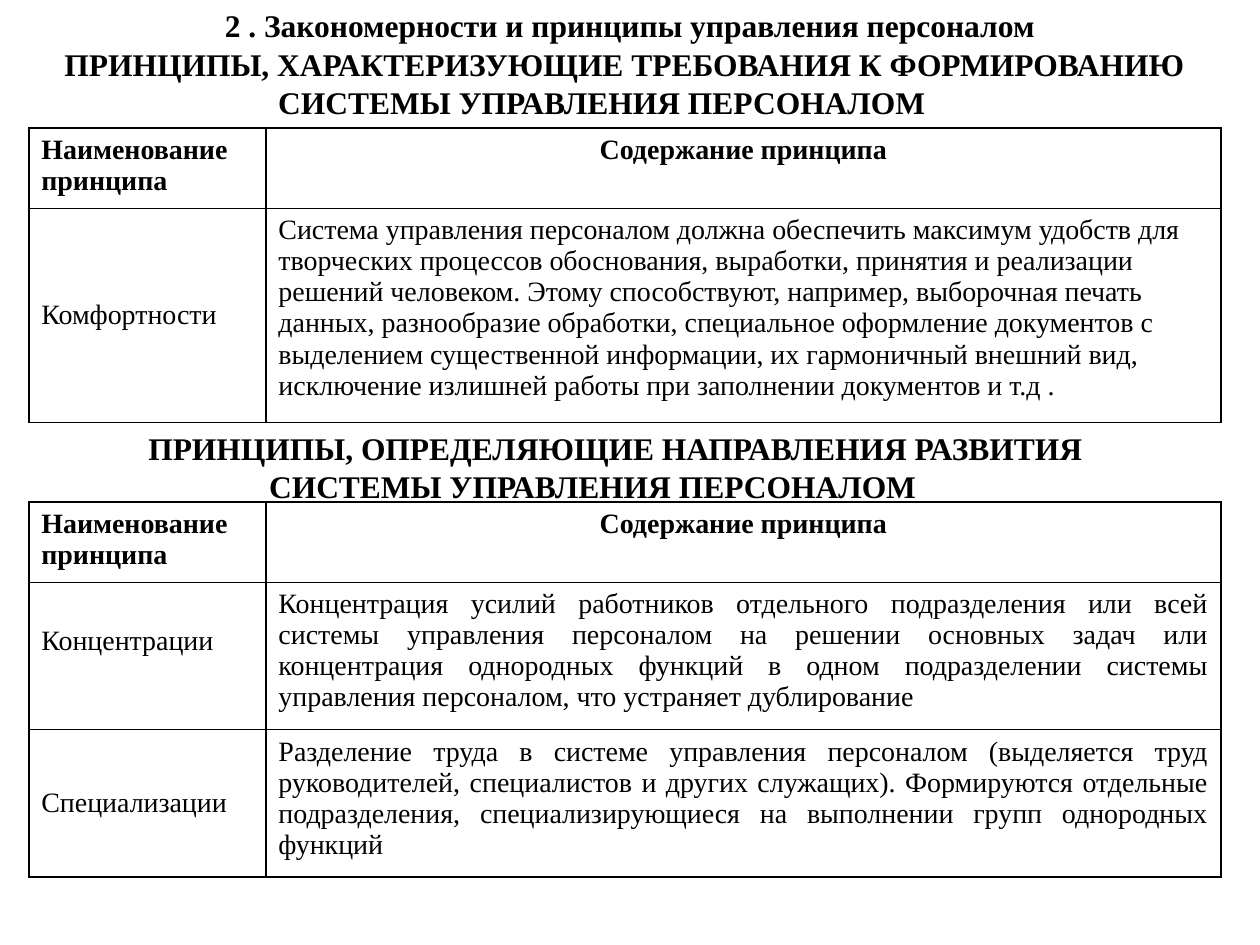
from lxml import etree
from pptx import Presentation
from pptx.dml.color import RGBColor as Rgb
from pptx.enum.text import MSO_ANCHOR as Anchor
from pptx.enum.text import MSO_AUTO_SIZE as Fit
from pptx.enum.text import PP_ALIGN as Align
from pptx.oxml.ns import qn
from pptx.util import Cm, Pt

HUES = {"ink": "000000", "paper": "FFFFFF"}
FONT = "Times New Roman"
LEFT, WIDE = 0.58, 24.03
COLS = (4.78, 19.25)
HEAD = ("Наименование принципа", "Содержание принципа")
HEAD_HIGH = 1.62

COMFORT = [
    ("Комфортности",
     "Система управления персоналом должна обеспечить максимум удобств для "
     "творческих процессов обоснования, выработки, принятия и реализации "
     "решений человеком. Этому способствуют, например, выборочная печать "
     "данных, разнообразие обработки, специальное оформление документов с "
     "выделением существенной информации, их гармоничный внешний вид, "
     "исключение излишней работы при заполнении документов и т.д ."),
]
GROWTH = [
    ("Концентрации",
     "Концентрация усилий работников отдельного подразделения или всей "
     "системы управления персоналом на решении основных задач или "
     "концентрация однородных функций в одном подразделении системы "
     "управления персоналом, что устраняет дублирование"),
    ("Специализации",
     "Разделение труда в системе управления персоналом (выделяется труд "
     "руководителей, специалистов и других служащих). Формируются отдельные "
     "подразделения, специализирующиеся на выполнении групп однородных "
     "функций"),
]


def write(frame, text, size=16, bold=False, align=Align.LEFT):
    """Fill a text frame, one paragraph per line of text."""
    frame.word_wrap = True
    for i, line in enumerate(text.split("\n")):
        para = frame.paragraphs[0] if i == 0 else frame.add_paragraph()
        para.alignment = align
        run = para.add_run()
        run.text = line
        font = run.font
        font.name, font.size, font.bold = FONT, Pt(size), bold
        font.color.rgb = Rgb.from_string(HUES["ink"])


def add_title(slide, text, left, top, width, height):
    box = slide.shapes.add_textbox(Cm(left), Cm(top), Cm(width), Cm(height))
    write(box.text_frame, text, size=18, bold=True, align=Align.CENTER)
    box.text_frame.auto_size = Fit.SHAPE_TO_FIT_TEXT


def style_cell(cell):
    """Set thin borders on all sides and a plain fill."""
    props = cell._tc.get_or_add_tcPr()
    for side in ("lnL", "lnR", "lnT", "lnB"):
        line = etree.SubElement(props, qn(f"a:{side}"), w=str(Pt(1)))
        fill = etree.SubElement(line, qn("a:solidFill"))
        etree.SubElement(fill, qn("a:srgbClr"), val=HUES["ink"])
    cell.fill.solid()
    cell.fill.fore_color.rgb = Rgb.from_string(HUES["paper"])


def add_grid(slide, top, rows, high, align):
    """Add a table of principles: a header and rows of equal height."""
    total = HEAD_HIGH + high * len(rows)
    grid = slide.shapes.add_table(len(rows) + 1, len(COLS), Cm(LEFT), Cm(top),
                                  Cm(WIDE), Cm(total)).table
    grid.first_row = grid.horz_banding = False
    for col, width in zip(grid.columns, COLS):
        col.width = Cm(width)
    for r, texts in enumerate([HEAD, *rows]):
        grid.rows[r].height = Cm(high if r else HEAD_HIGH)
        for c, text in enumerate(texts):
            cell = grid.cell(r, c)
            side = (align if r else Align.CENTER) if c else Align.LEFT
            write(cell.text_frame, text, bold=r == 0, align=side)
            if r and c == 0:
                cell.vertical_anchor = Anchor.MIDDLE
            style_cell(cell)
    return grid


def main():
    deck = Presentation()
    deck.slide_width, deck.slide_height = Cm(25.4), Cm(19.05)
    slide = deck.slides.add_slide(deck.slide_layouts[6])

    # Topic
    add_title(slide, "2 . Закономерности и принципы управления персоналом",
              0, 0, 25.4, 1.02)

    # Principles of forming the system
    add_grid(slide, 2.58, COMFORT, 4.32, Align.LEFT)
    add_title(slide, "ПРИНЦИПЫ, ХАРАКТЕРИЗУЮЩИЕ ТРЕБОВАНИЯ К ФОРМИРОВАНИЮ "
              "СИСТЕМЫ УПРАВЛЕНИЯ ПЕРСОНАЛОМ \t", LEFT, 0.79, WIDE, 1.8)

    # Principles of developing the system
    add_title(slide, "ПРИНЦИПЫ, ОПРЕДЕЛЯЮЩИЕ НАПРАВЛЕНИЯ РАЗВИТИЯ\n"
              "СИСТЕМЫ УПРАВЛЕНИЯ ПЕРСОНАЛОМ \t", 0, 8.53, 24.82, 1.8)
    grid = add_grid(slide, 10.12, GROWTH, 2.97, Align.JUSTIFY)
    grid.cell(1, 0).margin_bottom = Cm(0.75)  # name sits above the middle

    deck.save("out.pptx")


if __name__ == "__main__":
    main()
